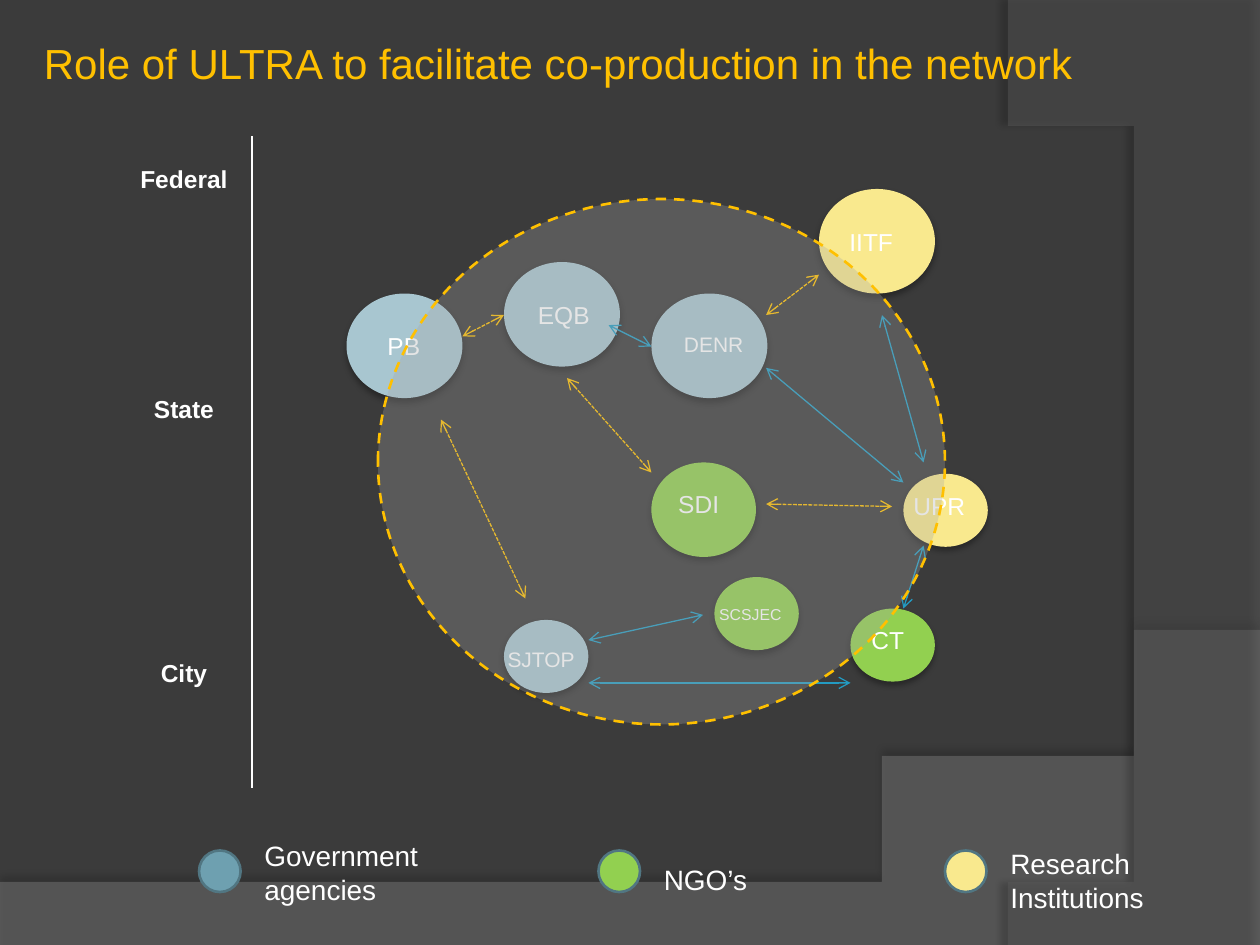
from lxml import etree
from pptx import Presentation, util as u
from pptx.dml.color import RGBColor
from pptx.enum import dml, shapes, text
from pptx.oxml.ns import qn

W, H = 10, 7.5
FONT = "Arial"
BACK = RGBColor(0x3B, 0x3B, 0x3B)
WHITE = RGBColor(0xFF, 0xFF, 0xFF)
GOLD = RGBColor(0xFF, 0xC0, 0x00)
BLUE = RGBColor(0x23, 0x9B, 0xC2)
PALE_BLUE = RGBColor(0xA8, 0xC6, 0xD0)
GREEN = RGBColor(0x92, 0xD0, 0x50)
YELLOW = RGBColor(0xF9, 0xE9, 0x8E)
STEEL = RGBColor(0x6E, 0xA0, 0xB0)
STEEL_EDGE = RGBColor(0x51, 0x76, 0x82)
GREY = RGBColor(0xA6, 0xA6, 0xA6)
WAVE = RGBColor(0x7F, 0x7F, 0x7F)
ARC = RGBColor(0x5E, 0x5E, 0x5E)

TITLE = "Role of ULTRA to facilitate co-production in the network"
LARGE, MEDIUM, SMALL = (0.92, 0.83), (0.83, 0.75), (0.67, 0.58)
CENTER, LEFT = text.PP_ALIGN.CENTER, text.PP_ALIGN.LEFT
NODES = [
    ("DENR", 5.17, 2.33, LARGE, PALE_BLUE, (5.33, 2.58, 0.92), 12, LEFT),
    ("EQB", 4, 2.08, LARGE, PALE_BLUE, (4.17, 2.33, 0.75), 14, LEFT),
    ("PB", 2.75, 2.33, LARGE, PALE_BLUE, (2.83, 2.58, 0.75), 14, CENTER),
    ("IITF", 6.5, 1.5, LARGE, YELLOW, (6.58, 1.75, 0.67), 14, CENTER),
    ("SJTOP", 4, 4.92, SMALL, PALE_BLUE, (3.92, 5.08, 0.75), 12, CENTER),
    ("SCSJEC", 5.67, 4.58, SMALL, GREEN, (5.58, 4.75, 0.75), 9, CENTER),
    ("CT", 6.75, 4.83, SMALL, GREEN, (6.67, 4.91, 0.75), 14, CENTER),
    ("UPR", 7.17, 3.76, SMALL, YELLOW, (7.08, 3.85, 0.75), 14, CENTER),
    ("SDI", 5.17, 3.67, MEDIUM, GREEN, (5.17, 3.83, 0.75), 14, CENTER),
]
LEVELS = [("Federal", 1.25), ("State", 3.08), ("City", 5.17)]
EXISTING_LINKS = [
    (5.58, 4.88, 4.67, 5.08), (4.67, 5.42, 6.75, 5.42),
    (7.33, 4.33, 7.17, 4.83), (7.17, 3.83, 6.08, 2.92),
    (7.33, 3.67, 7, 2.5), (4.83, 2.58, 5.17, 2.75),
]
ULTRA_LINKS = [
    (3.5, 3.33, 4.17, 4.75), (6.08, 4, 7.08, 4.02),
    (6.08, 2.5, 6.5, 2.18), (3.67, 2.67, 4, 2.5), (4.5, 3, 5.17, 3.75),
]
LEGEND = [
    ("Government agencies", 1.58, 6.61, 0.64, STEEL),
    ("NGO’s", 4.75, 6.8, 0.37, GREEN),
    ("Research Institutions", 7.5, 6.67, 0.64, YELLOW),
]

prs = Presentation()
prs.slide_width, prs.slide_height = u.Inches(W), u.Inches(H)
s = prs.slides.add_slide(prs.slide_layouts[6])
s.background.fill.solid()
s.background.fill.fore_color.rgb = BACK


def inches(*values):
    return [u.Inches(v) for v in values]


def paint(sp, color, alpha=None, edge=None, shadow=None):
    sp.shadow.inherit = False
    sp.fill.solid()
    sp.fill.fore_color.rgb = color
    if alpha:
        clr = sp.fill._xPr.find(qn("a:solidFill"))[0]
        etree.SubElement(clr, qn("a:alpha"), val=str(alpha * 1000))
    if edge:
        sp.line.color.rgb = edge
        sp.line.width = u.Pt(1.5)
    else:
        sp.line.fill.background()
    if shadow:
        opacity, blur, dist, angle = shadow
        effects = sp._element.spPr.find(qn("a:effectLst"))
        shade = etree.SubElement(
            effects, qn("a:outerShdw"), blurRad=str(u.Pt(blur)),
            dist=str(u.Pt(dist)), dir=str(angle * 60000), rotWithShape="0")
        clr = etree.SubElement(shade, qn("a:srgbClr"), val="000000")
        etree.SubElement(clr, qn("a:alpha"), val=str(opacity * 1000))


def ellipse(x, y, w, h, color, **style):
    sp = s.shapes.add_shape(shapes.MSO_SHAPE.OVAL, *inches(x, y, w, h))
    paint(sp, color, **style)
    return sp


def label(words, x, y, w, h, size, color=WHITE, align=LEFT, bold=False):
    tf = s.shapes.add_textbox(*inches(x, y, w, h)).text_frame
    tf.word_wrap = True
    p = tf.paragraphs[0]
    p.text, p.alignment = words, align
    p.font.name, p.font.size, p.font.bold = FONT, u.Pt(size), bold
    p.font.color.rgb = color


def line(ends, color, dash=None, arrows=True):
    cn = s.shapes.add_connector(shapes.MSO_CONNECTOR.STRAIGHT, *inches(*ends))
    cn.line.color.rgb = color
    cn.line.width = u.Pt(0.75)
    if dash:
        cn.line.dash_style = dash
    if arrows:
        for end in ("a:headEnd", "a:tailEnd"):
            etree.SubElement(cn.line._ln, qn(end), type="arrow")
    etree.SubElement(cn._element.spPr, qn("a:effectLst"))


def bezier(*controls, steps=60):
    def at(t, values):
        a, b, c, d = values
        k = 1 - t
        return k**3 * a + 3 * k * k * t * b + 3 * k * t * t * c + t**3 * d
    return [tuple(at(i / steps, axis) for axis in zip(*controls))
            for i in range(steps + 1)]


def backdrop(points, color, alpha, shadow):
    fb = s.shapes.build_freeform(*points[0], scale=u.Inches(1))
    fb.add_line_segments(points[1:], close=True)
    paint(fb.convert_to_shape(), color, alpha=alpha, shadow=shadow)


backdrop([(0, 7.51), (W, 7.51)]
         + bezier((W, 5.2), (5.59, 7.29), (3.91, 7.19), (0, 7.05)),
         WAVE, 45, (35, 4, 3.5, 270))
backdrop([(W, 0.02), (W, H)]
         + bezier((8.21, H), (9.35, 6.19), (10.18, 3), (8, 0)),
         ARC, 40, (45, 4, 4, 180))

for name, x, y, size, color, (tx, ty, tw), points, align in NODES:
    ellipse(x, y, *size, color, shadow=(32, 3.5, 2.2, 90))
    label(name, tx, ty, tw, 0.34, points, align=align)

line((2, 1.08, 2, 6.25), WHITE, arrows=False)
for name, y in LEVELS:
    label(name, 1, y, 0.92, 0.34, 14, align=CENTER, bold=True)

for ends in EXISTING_LINKS:
    line(ends, BLUE)
for name, x, y, h, color in LEGEND:
    ellipse(x, 6.75, 0.33, 0.33, color, edge=STEEL_EDGE)
    label(name, x + 0.42, y, 1.58, h, 16)
for ends in ULTRA_LINKS:
    line(ends, GOLD, dml.MSO_LINE.SQUARE_DOT)

reach = ellipse(3, 1.58, 4.5, 4.17, GREY, alpha=29, edge=GOLD)
reach.line.dash_style = dml.MSO_LINE.DASH
label(TITLE, 0.25, 0.25, 9.5, 0.5, 24, GOLD)

prs.save("out.pptx")
